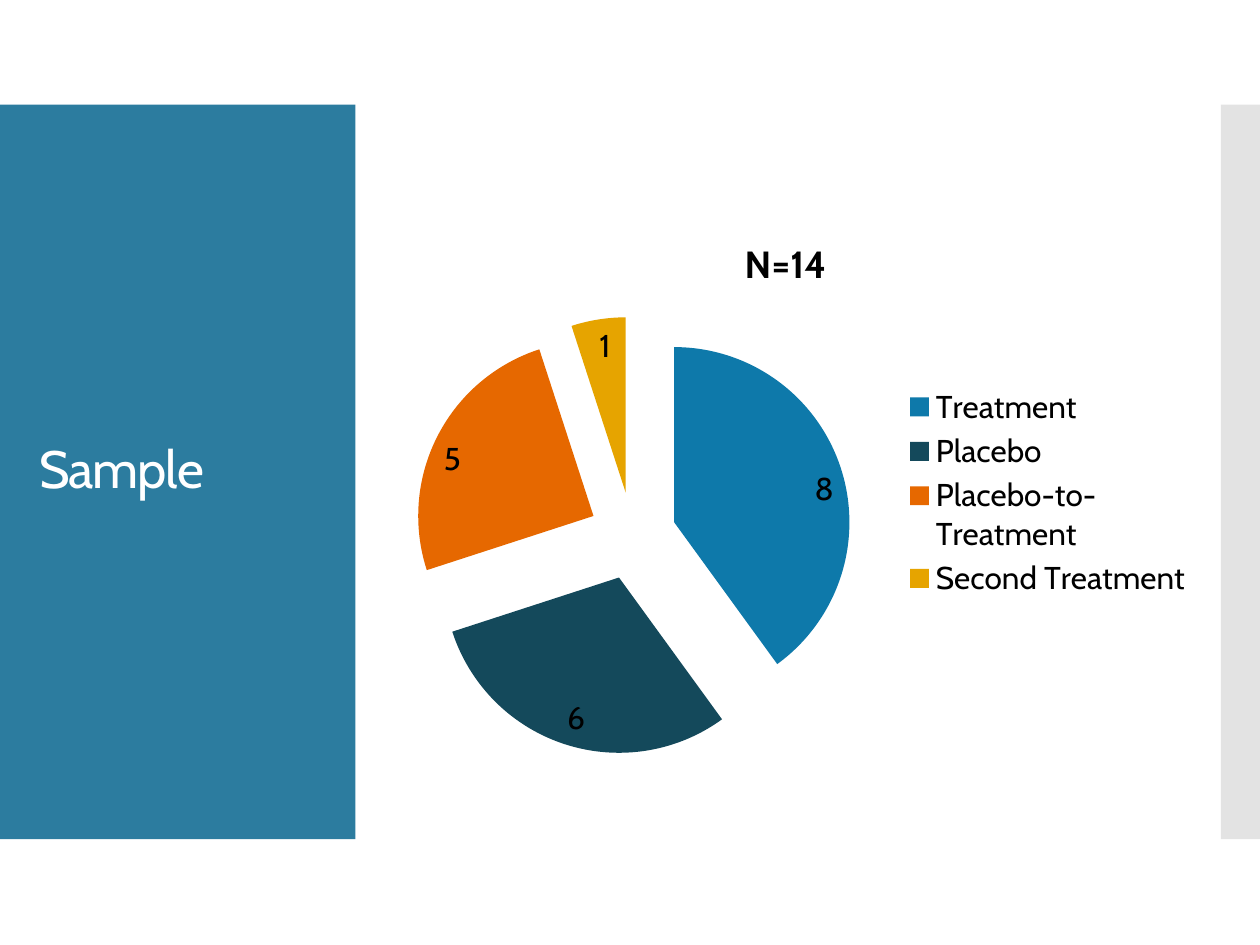
"""Build the Sample slide: a side-panel title beside an exploded pie chart."""
import pptx
import pptx.chart.data
import pptx.dml.color
import pptx.enum.chart
import pptx.enum.shapes
import pptx.enum.text
import pptx.oxml
import pptx.oxml.ns
import pptx.util
from pptx.util import Inches, Pt

HEADING = "Sample"
CHART_TITLE = "N=14"
FONT = "Cabin"
GROUPS = [
    ("Treatment", 8, "0E79AA"),
    ("Placebo", 6, "14495B"),
    ("Placebo-to-Treatment", 5, "E66800"),
    ("Second Treatment", 1, "E6A400"),
]
BANDS = [(0, 2.82, "2C7C9F", 100), (9.69, 0.31, "C8C8C8", 50)]
BAND_TOP, BAND_HEIGHT = 0.83, 5.83
HEADING_BOX = (0.21, 1.23, 2.42, 5.03)
CHART_BOX = (2.9, 1.69, 6.67, 4.44)
EXPLOSION = 25


def color(value):
    return pptx.dml.color.RGBColor.from_string(value)


def apply(target, values):
    for name, value in values.items():
        setattr(target, name, value)


def paint(fill, value, opacity=100):
    fill.solid()
    fill.fore_color.rgb = color(value)
    if opacity < 100:
        tint = fill._xPr.find(".//" + pptx.oxml.ns.qn("a:srgbClr"))
        alpha = tint.makeelement(pptx.oxml.ns.qn("a:alpha"), {"val": str(opacity * 1000)})
        tint.append(alpha)


def style(font, size, value, bold=False):
    apply(font, {"name": FONT, "size": Pt(size), "bold": bold})
    font.color.rgb = color(value)


def add_bands(slide):
    for left, width, value, opacity in BANDS:
        band = slide.shapes.add_shape(
            pptx.enum.shapes.MSO_SHAPE.RECTANGLE,
            *map(Inches, (left, BAND_TOP, width, BAND_HEIGHT)))
        band.shadow.inherit = False
        paint(band.fill, value, opacity)
        band.line.fill.background()
        slide.shapes._spTree.remove(band._element)
        slide.shapes._spTree.insert_element_before(band._element, "p:sp")


def add_heading(slide):
    heading = slide.shapes.title
    apply(heading, dict(zip(("left", "top", "width", "height"), map(Inches, HEADING_BOX))))
    frame = heading.text_frame
    frame.text = HEADING
    apply(frame, {"word_wrap": True,
                  "vertical_anchor": pptx.enum.text.MSO_ANCHOR.MIDDLE})
    line = frame.paragraphs[0]
    apply(line, {"alignment": pptx.enum.text.PP_ALIGN.LEFT, "line_spacing": 0.9})
    style(line.runs[0].font, 30, "FFFFFF")
    line.runs[0].font._element.set("spc", "-60")


def add_pie(slide):
    names, counts, colors = zip(*GROUPS)
    data = pptx.chart.data.CategoryChartData()
    data.categories = names
    data.add_series("Series 1", counts)
    chart = slide.shapes.add_chart(
        pptx.enum.chart.XL_CHART_TYPE.PIE, *map(Inches, CHART_BOX), data).chart
    style(chart.font, 18, "000000")

    chart.has_title = True
    chart.chart_title.text_frame.text = CHART_TITLE
    style(chart.chart_title.text_frame.paragraphs[0].runs[0].font, 21.6, "000000", True)
    chart.chart_title.include_in_layout = False

    chart.has_legend = True
    apply(chart.legend, {"position": pptx.enum.chart.XL_LEGEND_POSITION.RIGHT,
                         "include_in_layout": False})

    pie = chart.plots[0]
    apply(pie, {"vary_by_categories": True, "has_data_labels": True})
    apply(pie.data_labels, {"show_value": True, "show_percentage": False,
                            "position": pptx.enum.chart.XL_LABEL_POSITION.INSIDE_END})
    series = pie.series[0]
    for index, value in enumerate(colors):
        paint(series.points[index].format.fill, value)
    explosion = pptx.oxml.parse_xml(
        f'<c:explosion {pptx.oxml.ns.nsdecls("c")} val="{EXPLOSION}"/>')
    series._element.find(pptx.oxml.ns.qn("c:dPt")).addprevious(explosion)


def main():
    deck = pptx.Presentation()
    apply(deck, {"slide_width": Inches(10), "slide_height": Inches(7.5)})
    slide = deck.slides.add_slide(deck.slide_layouts[5])
    add_bands(slide)
    add_heading(slide)
    add_pie(slide)
    deck.save("out.pptx")


if __name__ == "__main__":
    main()
